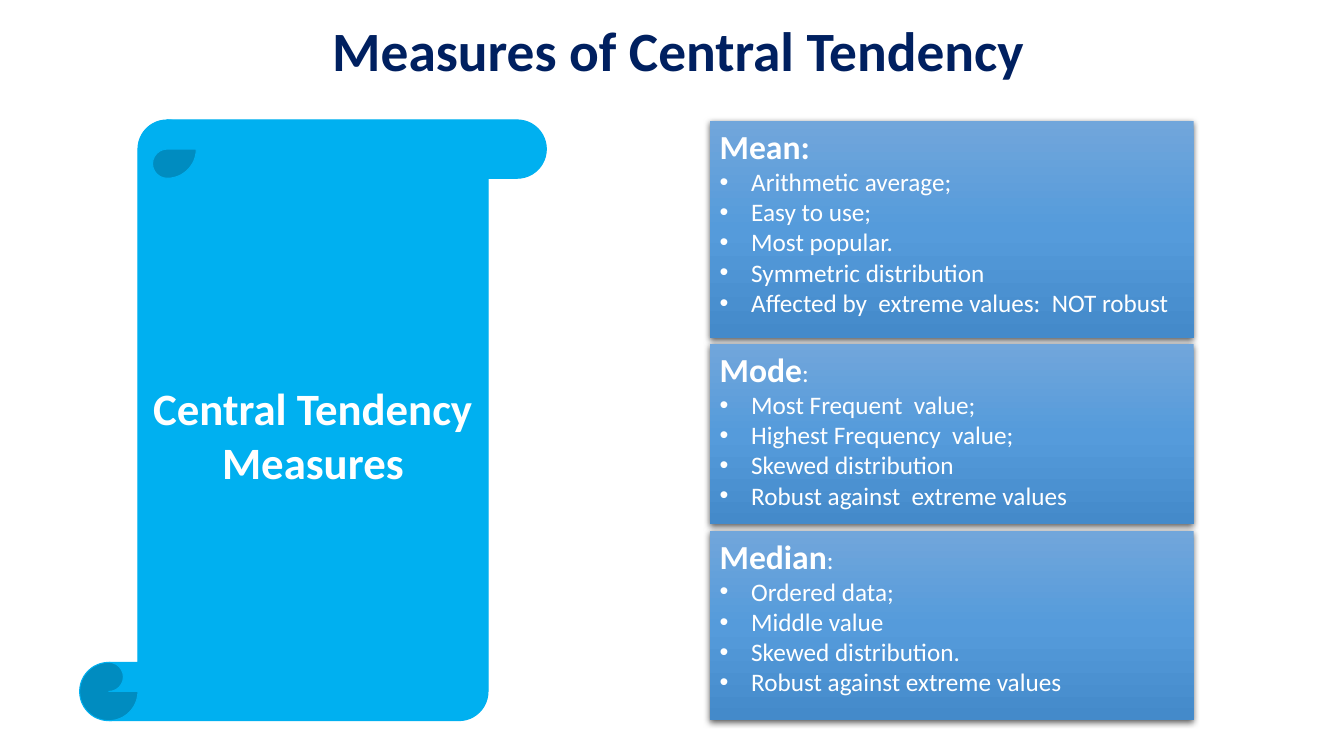
import copy

import pptx
import pptx.dml.color
import pptx.enum.shapes
import pptx.enum.text
import pptx.oxml
import pptx.oxml.ns
import pptx.util

Pt = pptx.util.Pt
ALIGN = pptx.enum.text.PP_ALIGN
ANCHOR = pptx.enum.text.MSO_ANCHOR
SHAPE = pptx.enum.shapes.MSO_SHAPE
NAMESPACE = 'xmlns:a="http://schemas.openxmlformats.org/drawingml/2006/main"'

WHITE = "FFFFFF"
NAVY = "002060"
SKY = "00B0F0"
CARD_GRADIENT = [(0, "71A6DB"), (0.5, "559BDB"), (1, "448ACA")]
CARD_LEFT, CARD_TOP, CARD_WIDTH, CARD_GAP = 507, 86.4, 345.6, 4.5
BULLET_INDENT = 22.5

CARDS = [
    (154.8, "Mean:", "", [
        "Arithmetic average;",
        "Easy to use;",
        "Most popular.",
        "Symmetric distribution",
        "Affected by  extreme values:  NOT robust",
    ]),
    (128.9, "Mode", ":", [
        "Most Frequent  value;",
        "Highest Frequency  value;",
        "Skewed distribution",
        "Robust against  extreme values",
    ]),
    (135.4, "Median", ":", [
        "Ordered data;",
        "Middle value",
        "Skewed distribution.",
        "Robust against extreme values",
    ]),
]


def rgb(color):
    return pptx.dml.color.RGBColor.from_string(color)


def format_run(run, size, color, bold):
    run.font.name = "Calibri"
    run.font.size = Pt(size)
    run.font.bold = bold
    run.font.color.rgb = rgb(color)


def add_title(slide, text):
    title = slide.shapes.title
    title.left, title.top = Pt(66), Pt(18)
    title.width, title.height = Pt(828), Pt(41)
    frame = title.text_frame
    frame.text = text
    frame.auto_size = pptx.enum.text.MSO_AUTO_SIZE.NONE
    frame.vertical_anchor = ANCHOR.MIDDLE
    paragraph = frame.paragraphs[0]
    paragraph.alignment = ALIGN.CENTER
    paragraph.line_spacing = 0.9
    format_run(paragraph.runs[0], 39.6, NAVY, True)


def add_scroll(slide, text):
    scroll = slide.shapes.add_shape(
        SHAPE.VERTICAL_SCROLL, Pt(56.9), Pt(85.7), Pt(333.4), Pt(429.1))
    scroll.shadow.inherit = False
    scroll.fill.solid()
    scroll.fill.fore_color.rgb = rgb(SKY)
    scroll.line.color.rgb = rgb(SKY)
    scroll.line.width = Pt(0.75)
    frame = scroll.text_frame
    frame.text = text
    frame.vertical_anchor = ANCHOR.MIDDLE
    paragraph = frame.paragraphs[0]
    paragraph.alignment = ALIGN.CENTER
    format_run(paragraph.runs[0], 32, WHITE, True)


def fill_gradient(shape, stops):
    shape.fill.gradient()
    shape.fill.gradient_angle = 270
    stop_list = shape.element.spPr.find(".//" + pptx.oxml.ns.qn("a:gsLst"))
    stop_list.append(copy.deepcopy(stop_list[-1]))
    for stop, (position, color) in zip(shape.fill.gradient_stops, stops):
        stop.position = position
        stop.color.rgb = rgb(color)


def add_shadow(shape):
    shape.shadow.inherit = False
    effects = shape.element.spPr.find(pptx.oxml.ns.qn("a:effectLst"))
    effects.append(pptx.oxml.parse_xml(
        f'<a:outerShdw {NAMESPACE} blurRad="{Pt(4.5)}" dist="{Pt(1.5)}" '
        'dir="5400000" algn="ctr" rotWithShape="0">'
        '<a:srgbClr val="000000"><a:alpha val="63000"/></a:srgbClr>'
        '</a:outerShdw>'))


def add_bullet(frame, text):
    paragraph = frame.add_paragraph()
    paragraph.text = text
    paragraph.alignment = ALIGN.LEFT
    format_run(paragraph.runs[0], 18, WHITE, False)
    properties = paragraph._p.get_or_add_pPr()
    properties.set("marL", str(Pt(BULLET_INDENT)))
    properties.set("indent", str(-Pt(BULLET_INDENT)))
    for tag in ('buFont typeface="Arial"', 'buChar char="•"'):
        name, attribute = tag.split(" ")
        properties.append(pptx.oxml.parse_xml(
            f"<a:{name} {NAMESPACE} {attribute}/>"))


def add_card(slide, top, height, heading, suffix, bullets):
    card = slide.shapes.add_shape(
        SHAPE.RECTANGLE, Pt(CARD_LEFT), Pt(top), Pt(CARD_WIDTH), Pt(height))
    fill_gradient(card, CARD_GRADIENT)
    card.line.fill.background()
    add_shadow(card)
    frame = card.text_frame
    frame.text = heading
    frame.word_wrap = True
    frame.vertical_anchor = ANCHOR.TOP
    paragraph = frame.paragraphs[0]
    paragraph.alignment = ALIGN.LEFT
    format_run(paragraph.runs[0], 24, WHITE, True)
    if suffix:
        run = paragraph.add_run()
        run.text = suffix
        format_run(run, 18, WHITE, False)
    for bullet in bullets:
        add_bullet(frame, bullet)


def main():
    presentation = pptx.Presentation()
    presentation.slide_width = Pt(960)
    presentation.slide_height = Pt(540)
    slide = presentation.slides.add_slide(presentation.slide_layouts[5])
    add_title(slide, " Measures of Central Tendency")
    top = CARD_TOP
    for height, heading, suffix, bullets in CARDS:
        add_card(slide, top, height, heading, suffix, bullets)
        top += height + CARD_GAP
    add_scroll(slide, "Central Tendency Measures")
    presentation.save("out.pptx")


if __name__ == "__main__":
    main()
